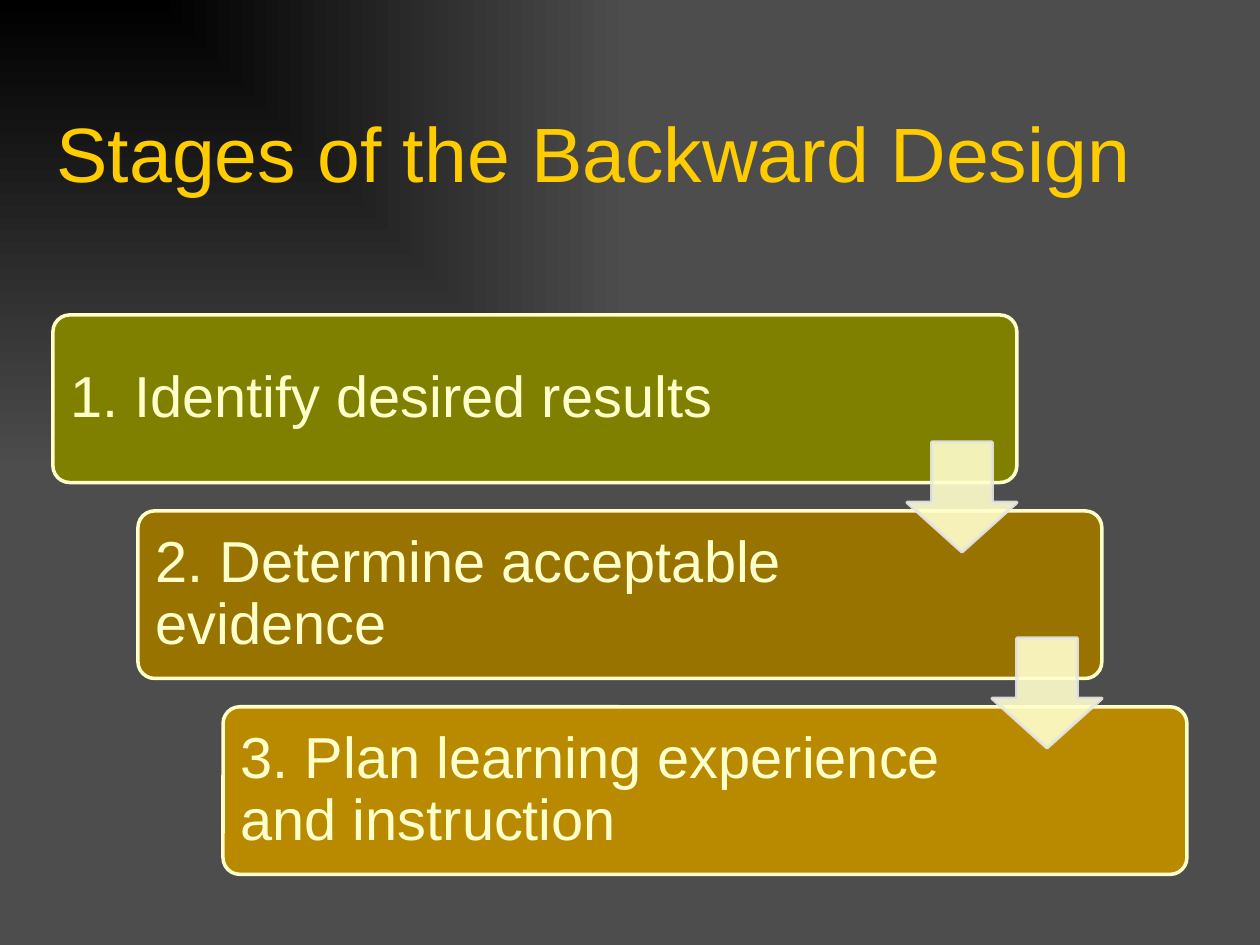
"""Build a slide showing the three stages of backward design as a staircase."""
from pptx import Presentation, util as u
from pptx.dml.color import RGBColor
from pptx.enum import shapes, text
from pptx.oxml import parse_xml
from pptx.oxml.ns import nsdecls, qn

COLORS = {
    "black": "000000", "gray": "4D4D4D", "gold": "FFCC00", "cream": "FFFFCC",
    "olive": "808000", "brown": "997300", "amber": "B98A00", "silver": "E8E8E2",
}
STAGES = [
    ("1. Identify desired results", "olive", 6.29),
    ("2. Determine acceptable evidence", "brown", 6.11),
    ("3. Plan learning experience and instruction", "amber", 6.11),
]
LEFT, TOP, WIDTH, HEIGHT = 0.42, 2.5, 7.65, 1.33
STEP_X, STEP_Y = 0.675, 1.555
ARROW_SIZE = 0.87


def add_panel(slide, kind, box, adjustments, fill, line, opacity=100):
    shape = slide.shapes.add_shape(kind, *map(u.Inches, box))
    shape.shadow.inherit = False
    for index, value in enumerate(adjustments):
        shape.adjustments[index] = value
    shape.line.width = u.Pt(2)
    for paint, color in ((shape.fill, fill), (shape.line.fill, line)):
        paint.solid()
        paint.fore_color.rgb = RGBColor.from_string(COLORS[color])
    if opacity < 100:
        for element in shape._element.spPr.iter(qn("a:srgbClr")):
            element.append(parse_xml(f'<a:alpha {nsdecls("a")} val="{opacity * 1000}"/>'))


def write_text(shape, words, size, color, frame_format, paragraph_format):
    frame = shape.text_frame
    frame.text = words
    paragraph = frame.paragraphs[0]
    font_format = {"name": "Arial", "size": u.Pt(size)}
    for target, values in ((frame, frame_format), (paragraph, paragraph_format),
                           (paragraph.font, font_format)):
        for name, value in values.items():
            setattr(target, name, value)
    paragraph.font.color.rgb = RGBColor.from_string(COLORS[color])


presentation = Presentation()
presentation.slide_width = u.Inches(10)
presentation.slide_height = u.Inches(7.5)
slide = presentation.slides.add_slide(presentation.slide_layouts[5])

background = slide.background.fill
background.gradient()
for stop, color in zip(background.gradient_stops, ("black", "gray")):
    stop.color.rgb = RGBColor.from_string(COLORS[color])
linear = next(slide._element.iter(qn("a:lin")))
linear.getparent().replace(linear, parse_xml(
    f'<a:path {nsdecls("a")} path="rect"><a:fillToRect r="100000" b="100000"/></a:path>'))

title = slide.shapes.title
for name, value in {"left": 0.35, "top": 0.79, "width": 9.45, "height": 0.83}.items():
    setattr(title, name, u.Inches(value))
write_text(title, "Stages of the Backward Design", 44, "gold",
           {"vertical_anchor": text.MSO_ANCHOR.BOTTOM, "word_wrap": True,
            "auto_size": text.MSO_AUTO_SIZE.SHAPE_TO_FIT_TEXT},
           {"alignment": text.PP_ALIGN.LEFT})

label_format = {"word_wrap": True, "vertical_anchor": text.MSO_ANCHOR.MIDDLE}
for side in ("left", "right", "top", "bottom"):
    label_format[f"margin_{side}"] = u.Inches(0.14)

for index, (words, color, label_width) in enumerate(STAGES):
    left, top = LEFT + index * STEP_X, TOP + index * STEP_Y
    add_panel(slide, shapes.MSO_SHAPE.ROUNDED_RECTANGLE, (left, top, WIDTH, HEIGHT),
              [0.1], color, "cream")
    label = slide.shapes.add_textbox(*map(u.Inches, (left, top, label_width, HEIGHT)))
    write_text(label, words, 33, "cream", label_format,
               {"line_spacing": 0.9, "alignment": text.PP_ALIGN.LEFT})

for index in range(len(STAGES) - 1):
    left = LEFT + WIDTH - ARROW_SIZE + index * STEP_X
    top = TOP + 1.01 + index * STEP_Y
    add_panel(slide, shapes.MSO_SHAPE.DOWN_ARROW, (left, top, ARROW_SIZE, ARROW_SIZE),
              [0.55, 0.45], "cream", "silver", opacity=90)

for shape in slide.shapes:
    if shape.has_text_frame and shape.is_placeholder and not shape.text_frame.text:
        shape._element.getparent().remove(shape._element)

presentation.save("out.pptx")
